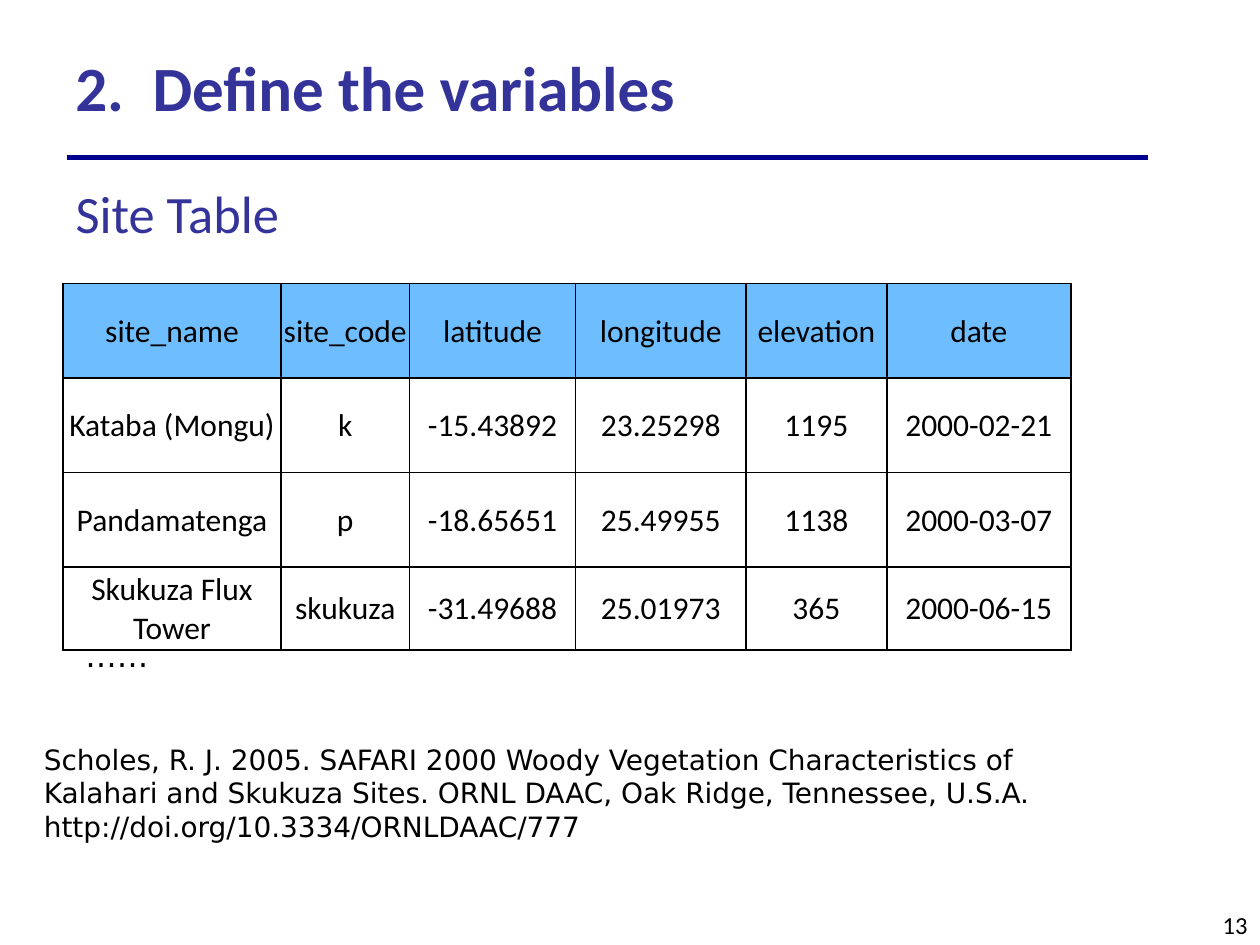
"""Build the slide that defines the variables of the site table."""
from dataclasses import dataclass

from lxml import etree
from pptx import Presentation
from pptx.dml.color import RGBColor
from pptx.enum.shapes import MSO_CONNECTOR
from pptx.enum.text import MSO_ANCHOR, MSO_AUTO_SIZE, PP_ALIGN
from pptx.oxml import parse_xml
from pptx.oxml.ns import qn
from pptx.slide import Slide
from pptx.table import _Cell
from pptx.text.text import TextFrame
from pptx.util import Emu, Pt

STRAIGHT = MSO_CONNECTOR.STRAIGHT
TOP, MIDDLE = MSO_ANCHOR.TOP, MSO_ANCHOR.MIDDLE
LEFT, CENTER, RIGHT = PP_ALIGN.LEFT, PP_ALIGN.CENTER, PP_ALIGN.RIGHT
FIXED = MSO_AUTO_SIZE.NONE

INDIGO = RGBColor(0x33, 0x33, 0x99)
NAVY = RGBColor(0x00, 0x00, 0x90)
SKY = RGBColor(0x6E, 0xBE, 0xFF)
BLACK = RGBColor(0x00, 0x00, 0x00)

EMU_PER_PX = 9144
DRAWING_NS = "http://schemas.openxmlformats.org/drawingml/2006/main"
BORDER_SIDES = ("lnL", "lnR", "lnT", "lnB")

COLUMN_WIDTHS = (173, 102, 132, 135, 112, 146)
ROW_HEIGHTS = (75, 75, 75, 66)
SITES = (
    ("site_name", "site_code", "latitude", "longitude", "elevation", "date"),
    ("Kataba (Mongu)", "k", "-15.43892", "23.25298", "1195", "2000-02-21"),
    ("Pandamatenga", "p", "-18.65651", "25.49955", "1138", "2000-03-07"),
    ("Skukuza Flux Tower", "skukuza", "-31.49688", "25.01973", "365", "2000-06-15"),
)


@dataclass(frozen=True)
class Style:
    """Type and placing of one text."""

    size: int
    name: str = "Calibri"
    color: RGBColor = BLACK
    bold: bool = False
    align: PP_ALIGN = LEFT
    anchor: MSO_ANCHOR = TOP
    wrap: bool = True


@dataclass(frozen=True)
class Box:
    """Place of one part, in px."""

    left: int
    top: int
    width: int
    height: int

    def format(self) -> dict[str, Emu]:
        """Give the place as shape attributes."""
        return {
            "left": px(self.left),
            "top": px(self.top),
            "width": px(self.width),
            "height": px(self.height),
        }


@dataclass(frozen=True)
class Label:
    """One free text on the slide."""

    text: str
    box: Box
    style: Style


HEADING = Style(30, color=INDIGO, anchor=MIDDLE)
CELL = Style(18, align=CENTER, anchor=MIDDLE)
SUBTITLE = Label("Site Table", Box(50, 117, 850, 103), HEADING)
LABELS = (
    Label("13", Box(767, 717, 233, 33), Style(14, align=RIGHT)),
    Label(
        "Scholes, R. J. 2005. SAFARI 2000 Woody Vegetation Characteristics of "
        "Kalahari and Skukuza Sites. ORNL DAAC, Oak Ridge, Tennessee, U.S.A. "
        "http://doi.org/10.3334/ORNLDAAC/777",
        Box(25, 584, 883, 92),
        Style(16, "DejaVu Sans"),
    ),
    Label("……", Box(58, 500, 73, 54), Style(18, "DejaVu Sans", wrap=False)),
    Label(
        "2.  Define the variables",
        Box(50, 17, 850, 103),
        Style(36, color=INDIGO, bold=True, anchor=MIDDLE),
    ),
)


def px(length: int) -> Emu:
    """Turn px into EMU."""
    return Emu(length * EMU_PER_PX)


def apply(target: object, values: dict[str, object]) -> None:
    """Set each attribute named in values."""
    for key, value in values.items():
        setattr(target, key, value)


def write(frame: TextFrame, text: str, style: Style) -> None:
    """Fill a text frame with one styled paragraph."""
    paragraph = frame.paragraphs[0]
    paragraph.alignment = style.align
    run = paragraph.add_run()
    run.text = text
    apply(run.font, {"name": style.name, "size": Pt(style.size), "bold": style.bold})
    run.font.color.rgb = style.color


def write_frame(frame: TextFrame, label: Label) -> None:
    """Set up the frame of a label and write its text."""
    style = label.style
    apply(frame, {
        "word_wrap": style.wrap,
        "auto_size": FIXED,
        "vertical_anchor": style.anchor,
    })
    write(frame, label.text, style)


def add_label(slide: Slide, label: Label) -> None:
    """Add one text box."""
    write_frame(slide.shapes.add_textbox(**label.box.format()).text_frame, label)


def add_rule(slide: Slide) -> None:
    """Add the line under the heading."""
    rule = slide.shapes.add_connector(STRAIGHT, px(53), px(125), px(911), px(125))
    rule.line.color.rgb = NAVY
    rule.line.width = Pt(2.75)
    etree.SubElement(rule._element.spPr, qn("a:effectLst"))


def add_borders(cell: _Cell) -> None:
    """Draw a thin black line on each side of a cell."""
    properties = cell._tc.get_or_add_tcPr()
    for side in BORDER_SIDES:
        properties.append(parse_xml(
            f'<a:{side} xmlns:a="{DRAWING_NS}" w="{Pt(1)}"><a:solidFill>'
            f'<a:srgbClr val="{BLACK}"/></a:solidFill></a:{side}>'
        ))


def format_cell(cell: _Cell, text: str, is_header: bool) -> None:
    """Write, frame and fill one cell."""
    apply(cell, {
        "margin_left": px(1),
        "margin_right": px(1),
        "margin_top": px(1),
        "margin_bottom": px(0),
        "vertical_anchor": CELL.anchor,
    })
    write(cell.text_frame, text, CELL)
    add_borders(cell)
    if is_header:
        cell.fill.solid()
        cell.fill.fore_color.rgb = SKY
    else:
        cell.fill.background()


def add_site_table(slide: Slide) -> None:
    """Add the table of sites."""
    box = Box(50, 225, sum(COLUMN_WIDTHS), sum(ROW_HEIGHTS))
    table = slide.shapes.add_table(len(SITES), len(SITES[0]), **box.format()).table
    table.horz_banding = False
    for column, width in zip(table.columns, COLUMN_WIDTHS):
        column.width = px(width)
    for index, (row, height, site) in enumerate(zip(table.rows, ROW_HEIGHTS, SITES)):
        row.height = px(height)
        for cell, text in zip(row.cells, site):
            format_cell(cell, text, index == 0)


def main() -> None:
    """Build and save the slide."""
    presentation = Presentation()
    apply(presentation, {"slide_width": px(1000), "slide_height": px(750)})
    slide = presentation.slides.add_slide(presentation.slide_layouts[5])
    add_rule(slide)
    title = slide.shapes.title
    apply(title, SUBTITLE.box.format())
    write_frame(title.text_frame, SUBTITLE)
    add_site_table(slide)
    for label in LABELS:
        add_label(slide, label)
    presentation.save("out.pptx")


if __name__ == "__main__":
    main()
